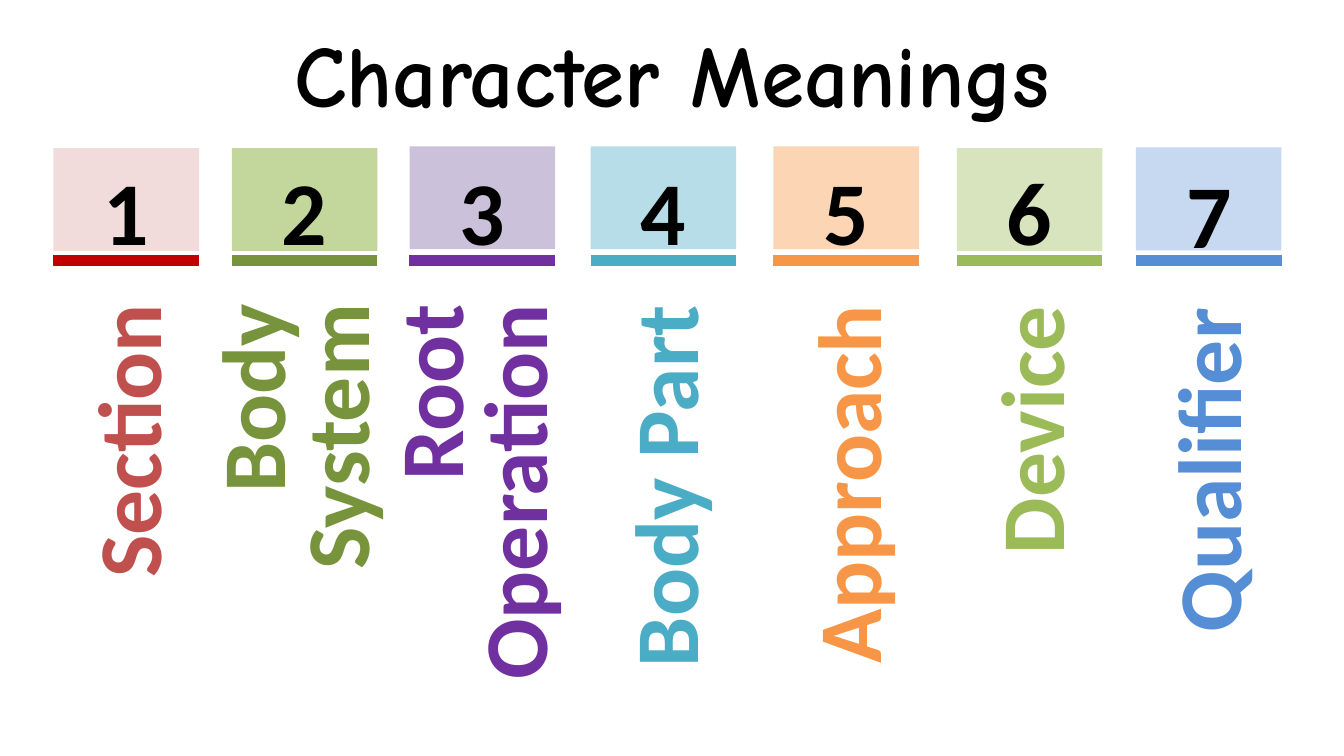
from dataclasses import dataclass

from lxml import etree
from pptx import Presentation
from pptx.dml.color import RGBColor
from pptx.enum import shapes as sh, text as tx
from pptx.oxml.ns import qn
from pptx.util import Pt


@dataclass(frozen=True)
class Theme:
    ink: str = "000000"
    head: str = "Comic Neue"
    body: str = "Calibri"
    title: float = 62.4
    big: float = 64
    lead: float = 60
    rule: float = 8


@dataclass(frozen=True)
class Column:
    name: str
    left: float
    top: float
    fill: str
    hue: str
    mid: float  # vertical centre of the label
    rule: str = ""  # colour of the line, if not that of the label
    lines: int = 1
    digit: float = 108  # top of the number
    shift: float = 0  # label offset from the card centre


THEME = Theme()
WIDE, HIGH = 104, 73.5
LINE = 185.8
LONG = 330

COLS = [
    Column("Section", 38.2, 105.8, "F2DCDB", "C0504D", 375.1, rule="C00000"),
    Column("Body System", 165.6, 105.8, "C3D69B", "77933C", 375.1, lines=2),
    Column("Root Operation", 292.5, 104.5, "CCC1DA", "7030A0", 375.1, lines=2),
    Column("Body Part", 421.9, 104.5, "B7DEE8", "4BACC6", 375.8),
    Column("Approach", 552.5, 104.5, "FCD5B5", "F79646", 375.8),
    Column("Device", 683.5, 105.8, "D7E4BD", "9BBB59", 376.6),
    Column("Qualifier", 811.4, 105.3, "C6D9F1", "558ED5", 378,
           digit=110.2, shift=-2),
]


def write(slide, words: str, box: tuple, size: float, hue: str, face: str,
          align=tx.PP_ALIGN.CENTER):
    """Add a text box of one bold paragraph."""
    item = slide.shapes.add_textbox(*map(Pt, box))
    frame = item.text_frame
    frame.word_wrap = True
    para = frame.paragraphs[0]
    para.text = words
    para.alignment = align
    font = para.font
    font.name, font.size, font.bold = face, Pt(size), True
    font.color.rgb = RGBColor.from_string(hue)
    return item


def label(slide, col: Column) -> None:
    """Add the name, turned to read upwards."""
    thick = 85 if col.lines == 1 else 128.2
    mid = col.left + WIDE / 2 + col.shift
    box = (mid - LONG / 2, col.mid - thick / 2, LONG, thick)
    item = write(slide, col.name, box, THEME.big, col.hue, THEME.body,
                 tx.PP_ALIGN.RIGHT)
    item.rotation = 270
    if col.lines > 1:
        item.text_frame.paragraphs[0].line_spacing = Pt(THEME.lead)


def card(slide, col: Column) -> None:
    """Add the tinted block."""
    item = slide.shapes.add_shape(
        sh.MSO_SHAPE.RECTANGLE, Pt(col.left), Pt(col.top), Pt(WIDE), Pt(HIGH))
    item.shadow.inherit = False
    item.fill.solid()
    item.fill.fore_color.rgb = RGBColor.from_string(col.fill)
    item.line.fill.background()


def rule(slide, col: Column) -> None:
    """Add the thick line below the block."""
    item = slide.shapes.add_connector(
        sh.MSO_CONNECTOR.STRAIGHT, Pt(col.left), Pt(LINE),
        Pt(col.left + WIDE), Pt(LINE))
    item.line.width = Pt(THEME.rule)
    item.line.color.rgb = RGBColor.from_string(col.rule or col.hue)
    etree.SubElement(item._element.spPr, qn("a:effectLst"))


def main() -> None:
    deck = Presentation()
    deck.slide_width, deck.slide_height = Pt(960), Pt(540)
    slide = deck.slides.add_slide(deck.slide_layouts[6])

    # Columns
    for num, col in enumerate(COLS, 1):
        label(slide, col)
        rule(slide, col)
        card(slide, col)
        write(slide, str(num), (col.left + 4.1, col.digit, 95.8, 85),
              THEME.big, THEME.ink, THEME.body)

    # Title
    title = write(slide, "Character Meanings", (48, 6.5, 864, 90),
                  THEME.title, THEME.ink, THEME.head)
    title.text_frame.vertical_anchor = tx.MSO_ANCHOR.MIDDLE

    deck.save("out.pptx")


if __name__ == "__main__":
    main()
